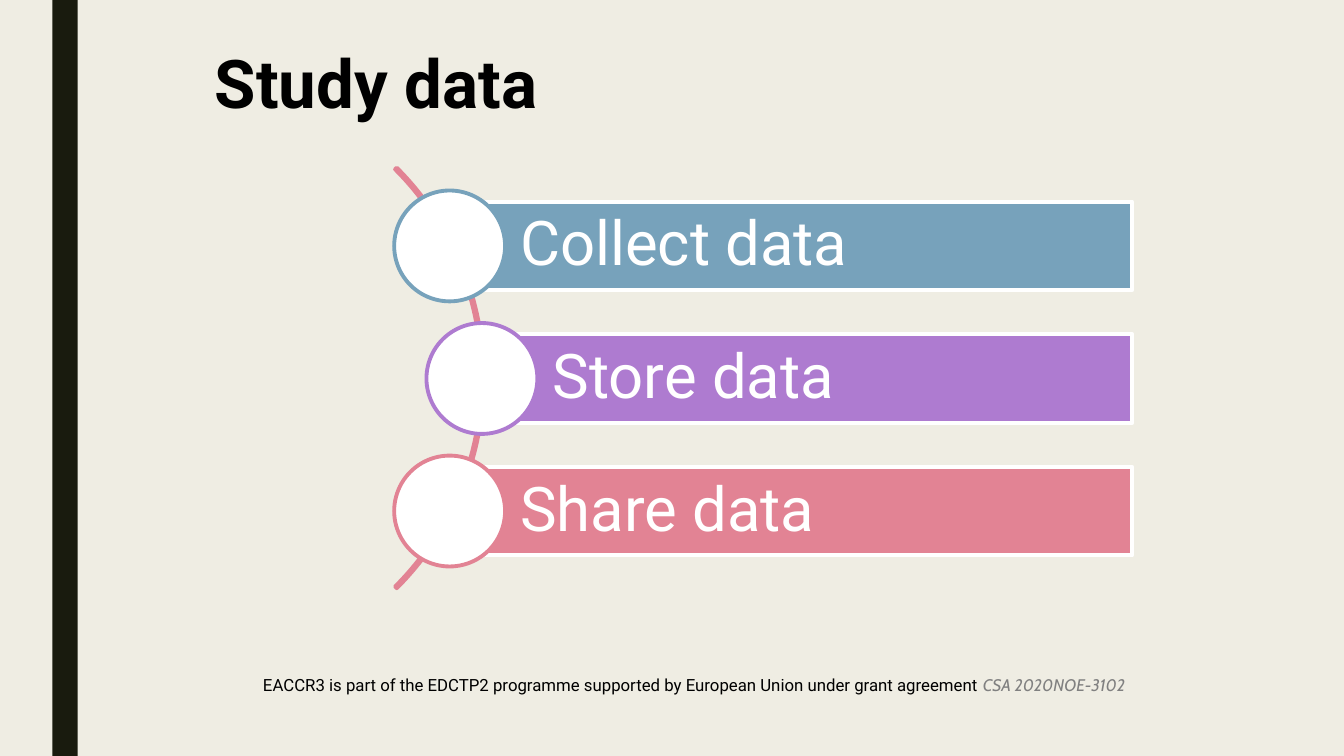
from pptx import Presentation
from pptx.dml.color import RGBColor
from pptx.enum.shapes import MSO_SHAPE
from pptx.enum.text import MSO_ANCHOR, MSO_AUTO_SIZE, PP_ALIGN
from pptx.util import Inches, Pt

RECTANGLE = MSO_SHAPE.RECTANGLE
OVAL = MSO_SHAPE.OVAL
BLOCK_ARC = MSO_SHAPE.BLOCK_ARC
TOP = MSO_ANCHOR.TOP
MIDDLE = MSO_ANCHOR.MIDDLE
LEFT = PP_ALIGN.LEFT
NO_AUTOFIT = MSO_AUTO_SIZE.NONE

CREAM = RGBColor(0xEF, 0xED, 0xE3)
DARK = RGBColor(0x19, 0x1B, 0x0E)
BLUE = RGBColor(0x77, 0xA2, 0xBB)
PURPLE = RGBColor(0xAE, 0x7B, 0xD0)
PINK = RGBColor(0xE2, 0x83, 0x94)
WHITE = RGBColor(0xFF, 0xFF, 0xFF)
BLACK = RGBColor(0, 0, 0)
GRAY = RGBColor(0x80, 0x80, 0x80)

STEPS = [("Collect data", BLUE, 0), ("Store data", PURPLE, 0.32), ("Share data", PINK, 0)]
STEP_PITCH = 1.315
CIRCLE_SIZE = 1.1
BAR_HEIGHT = 0.88
ARC_SIZE = 5.9


def add_shape(slide, kind, left, top, width, height, fill=None, line=None):
    shape = slide.shapes.add_shape(kind, Inches(left), Inches(top), Inches(width), Inches(height))
    shape.shadow.inherit = False
    if fill is None:
        shape.fill.background()
    else:
        shape.fill.solid()
        shape.fill.fore_color.rgb = fill
    if line is None:
        shape.line.fill.background()
    else:
        shape.line.color.rgb = line
        shape.line.width = Pt(2.75)
    return shape


def set_font(font, name, size, color):
    font.name = name
    font.size = Pt(size)
    font.color.rgb = color


def add_title(slide, left, top, width, height):
    title = slide.shapes.title
    title.left, title.top = Inches(left), Inches(top)
    title.width, title.height = Inches(width), Inches(height)
    frame = title.text_frame
    frame.text = "Study data"
    frame.auto_size = NO_AUTOFIT
    frame.vertical_anchor = TOP
    paragraph = frame.paragraphs[0]
    paragraph.alignment = LEFT
    paragraph.line_spacing = 0.9
    set_font(paragraph.font, "Roboto", 48, BLACK)
    paragraph.font.bold = True


def add_step(slide, left, top, right, text, color):
    bar_left = left + CIRCLE_SIZE / 2
    bar_top = top + (CIRCLE_SIZE - BAR_HEIGHT) / 2
    bar = add_shape(slide, RECTANGLE, bar_left, bar_top, right - bar_left, BAR_HEIGHT, color, WHITE)
    frame = bar.text_frame
    frame.text = text
    frame.word_wrap = True
    frame.vertical_anchor = MIDDLE
    frame.margin_left = Inches(0.7)
    frame.margin_top = frame.margin_right = frame.margin_bottom = Inches(0.12)
    paragraph = frame.paragraphs[0]
    paragraph.alignment = LEFT
    paragraph.line_spacing = 0.9
    set_font(paragraph.font, "Roboto", 44, WHITE)
    add_shape(slide, OVAL, left, top, CIRCLE_SIZE, CIRCLE_SIZE, WHITE, color)


def add_steps(slide, left, top, width):
    arc = add_shape(slide, BLOCK_ARC, left - 5.01, top - 1.09, ARC_SIZE, ARC_SIZE, line=PINK)
    for index, value in enumerate((189, 27, 0.004)):
        arc.adjustments[index] = value
    for index, (text, color, indent) in enumerate(STEPS):
        add_step(slide, left + indent, top + index * STEP_PITCH, left + width, text, color)


def add_funding_note(slide, left, top, width, height):
    box = slide.shapes.add_textbox(Inches(left), Inches(top), Inches(width), Inches(height))
    box.text_frame.word_wrap = True
    paragraph = box.text_frame.paragraphs[0]
    statement = paragraph.add_run()
    statement.text = (
        "EACCR3 is part of the EDCTP2 programme supported by "
        "European Union under grant agreement "
    )
    set_font(statement.font, "Roboto", 12, BLACK)
    grant = paragraph.add_run()
    grant.text = "CSA 2020NOE-3102"
    set_font(grant.font, "Cabin", 12, GRAY)
    grant.font.italic = True


def main():
    presentation = Presentation()
    presentation.slide_width = Inches(13.33)
    presentation.slide_height = Inches(7.5)
    slide = presentation.slides.add_slide(presentation.slide_layouts[5])
    slide.background.fill.solid()
    slide.background.fill.fore_color.rgb = CREAM
    add_shape(slide, RECTANGLE, 0.52, 0, 0.25, 7.5, DARK)
    add_steps(slide, 3.91, 1.89, 7.32)
    add_title(slide, 2.03, 0.45, 10.29, 1)
    add_funding_note(slide, 2.51, 6.64, 9.55, 0.3)
    presentation.save("out.pptx")


if __name__ == "__main__":
    main()
